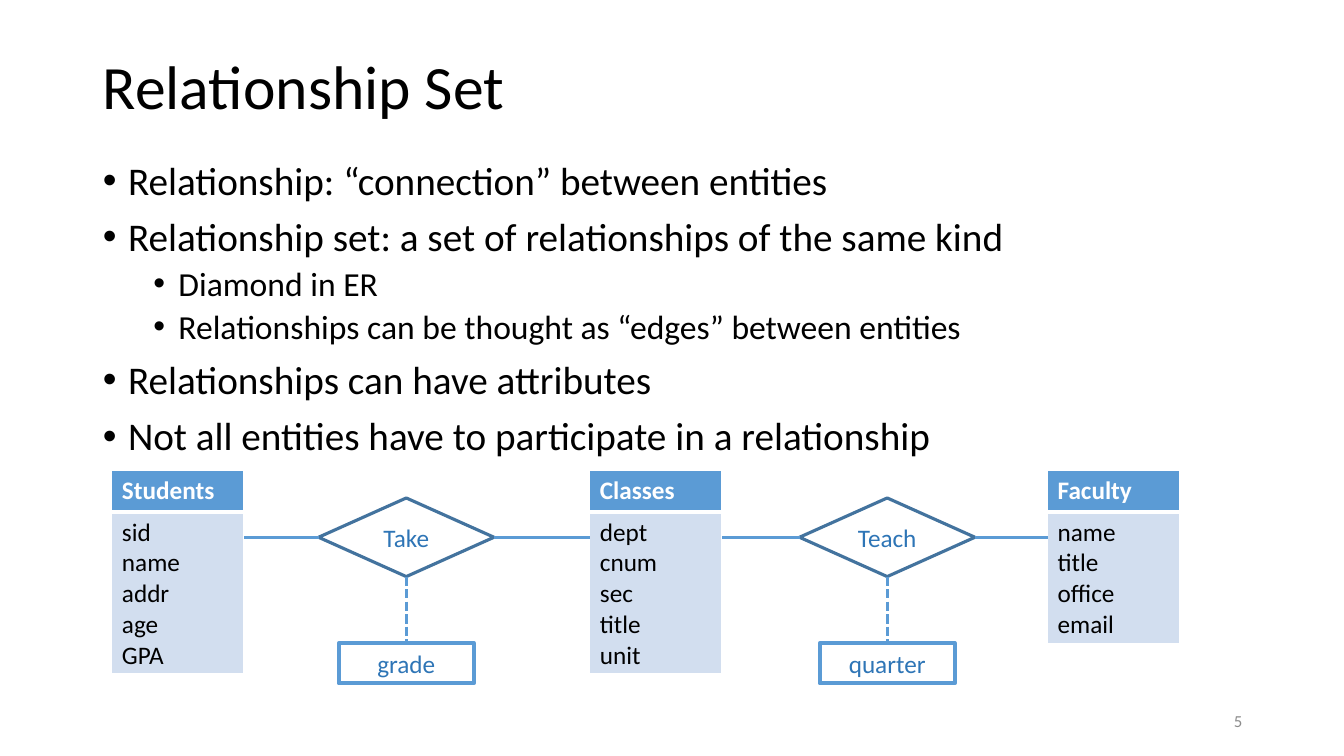
from dataclasses import dataclass

import pptx
import pptx.dml.color
import pptx.enum.dml
import pptx.enum.shapes
import pptx.enum.text
import pptx.oxml
import pptx.oxml.ns
import pptx.util

Inches = pptx.util.Inches
Pt = pptx.util.Pt
Align = pptx.enum.text.PP_ALIGN
Anchor = pptx.enum.text.MSO_ANCHOR
Shapes = pptx.enum.shapes.MSO_SHAPE

TITLE = "Relationship Set"
BULLETS = [
    (0, "Relationship: “connection” between entities"),
    (0, "Relationship set: a set of relationships of the same kind"),
    (1, "Diamond in ER"),
    (1, "Relationships can be thought as “edges” between entities"),
    (0, "Relationships can have attributes"),
    (0, "Not all entities have to participate in a relationship"),
]
# Entity name, left edge, attributes
ENTITIES = [
    ("Students", 1.11, ["sid", "name", "addr", "age", "GPA"]),
    ("Classes", 5.85, ["dept", "cnum", "sec", "title", "unit"]),
    ("Faculty", 10.39, ["name", "title", "office", "email"]),
]
# Relationship name, centre, attribute; each one joins two neighbouring entities
RELATIONSHIPS = [("Take", 4.03, "grade"), ("Teach", 8.8, "quarter")]
SLIDE_NUMBER = "5"


@dataclass(frozen=True)
class Theme:
    font: str = "Calibri"
    black: str = "000000"
    white: str = "FFFFFF"
    grey: str = "8C8C8C"
    blue: str = "5B9BD5"
    pale_blue: str = "D2DEEF"
    diamond_blue: str = "43739E"
    text_blue: str = "2E75B6"
    title_size: int = 44
    bullet_sizes: tuple = (28, 24)
    diagram_size: int = 18
    number_size: int = 12
    line_width: float = 2.25
    box_line_width: float = 2.75


THEME = Theme()
SLIDE_WIDTH, SLIDE_HEIGHT = 13.33, 7.5
MARGIN, CONTENT_WIDTH = 0.92, 11.5
ENTITY_TOP, ENTITY_WIDTH, HEADER_HEIGHT, LINE_HEIGHT = 4.67, 1.31, 0.41, 0.3
DIAMOND_WIDTH, DIAMOND_HEIGHT, AXIS = 1.74, 0.78, 5.33
BOX_WIDTH, BOX_HEIGHT, BOX_TOP = 1.34, 0.4, 6.38


def rgb(color):
    return pptx.dml.color.RGBColor.from_string(color)


def place(shape, left, top, width, height):
    shape.left, shape.top = Inches(left), Inches(top)
    shape.width, shape.height = Inches(width), Inches(height)


def write(frame, lines, size=THEME.diagram_size, color=THEME.black, bold=False,
          align=Align.LEFT, anchor=Anchor.TOP):
    """Fill a text frame with one paragraph per line and return the paragraphs."""
    frame.word_wrap = True
    frame.vertical_anchor = anchor
    paragraphs = []
    for index, line in enumerate(lines):
        paragraph = frame.add_paragraph() if index else frame.paragraphs[0]
        paragraph.alignment = align
        run = paragraph.add_run()
        run.text = line
        run.font.name, run.font.size, run.font.bold = THEME.font, Pt(size), bold
        run.font.color.rgb = rgb(color)
        paragraphs.append(paragraph)
    return paragraphs


def add_title(slide):
    title = slide.shapes.title
    place(title, MARGIN, 0.4, CONTENT_WIDTH, 0.97)
    title.text_frame.auto_size = pptx.enum.text.MSO_AUTO_SIZE.NONE
    paragraph = write(title.text_frame, [TITLE], size=THEME.title_size, anchor=Anchor.MIDDLE)[0]
    paragraph.line_spacing = 0.9


def add_bullets(slide):
    body = slide.placeholders[1]
    place(body, MARGIN, 1.55, CONTENT_WIDTH, 5.21)
    body.text_frame.auto_size = pptx.enum.text.MSO_AUTO_SIZE.NONE
    paragraphs = write(body.text_frame, [text for _, text in BULLETS])
    for paragraph, (level, _) in zip(paragraphs, BULLETS):
        paragraph.level = level
        paragraph.line_spacing = 0.9
        paragraph.space_before = Pt(5 if level else 10)
        paragraph.runs[0].font.size = Pt(THEME.bullet_sizes[level])
        properties = paragraph._p.get_or_add_pPr()
        properties.set("marL", str(Inches(0.25 + 0.5 * level)))
        properties.set("indent", str(Inches(-0.25)))
        for tag, name, value in (("a:buFont", "typeface", "Arial"), ("a:buChar", "char", "•")):
            bullet = pptx.oxml.parse_xml(f"<{tag} {pptx.oxml.ns.nsdecls('a')}/>")
            bullet.set(name, value)
            properties.append(bullet)


def set_borders(cell, **widths):
    """Draw white borders; widths in points are keyed by side: L, R, T, B."""
    properties = cell._tc.get_or_add_tcPr()
    for side, width in widths.items():
        properties.append(pptx.oxml.parse_xml(
            f'<a:ln{side} {pptx.oxml.ns.nsdecls("a")} w="{Pt(width)}"><a:solidFill>'
            f'<a:srgbClr val="{THEME.white}"/></a:solidFill></a:ln{side}>'))


def add_entity(slide, name, left, attributes):
    body_height = 0.1 + LINE_HEIGHT * len(attributes)
    table = slide.shapes.add_table(
        2, 1, Inches(left), Inches(ENTITY_TOP), Inches(ENTITY_WIDTH),
        Inches(HEADER_HEIGHT + body_height)).table
    table.rows[0].height, table.rows[1].height = Inches(HEADER_HEIGHT), Inches(body_height)
    header, body = table.cell(0, 0), table.cell(1, 0)
    set_borders(header, L=1, R=1, T=1, B=3)
    set_borders(body, L=1, R=1, T=3, B=1)
    for cell, fill in ((header, THEME.blue), (body, THEME.pale_blue)):
        cell.fill.solid()
        cell.fill.fore_color.rgb = rgb(fill)
    write(header.text_frame, [name], color=THEME.white, bold=True)
    write(body.text_frame, attributes)


def add_outline(slide, kind, text, center, top, width, height, color, line_width):
    shape = slide.shapes.add_shape(
        kind, Inches(center - width / 2), Inches(top), Inches(width), Inches(height))
    shape.shadow.inherit = False
    shape.fill.background()
    shape.line.color.rgb = rgb(color)
    shape.line.width = Pt(line_width)
    write(shape.text_frame, [text], color=THEME.text_blue, align=Align.CENTER,
          anchor=Anchor.MIDDLE)
    return shape


def add_link(slide, shape, site, end_x, end_y):
    """Draw a line from a connection site of a shape to a point."""
    link = slide.shapes.add_connector(
        pptx.enum.shapes.MSO_CONNECTOR.STRAIGHT, Inches(end_x), Inches(end_y),
        Inches(end_x), Inches(end_y))
    link.begin_connect(shape, site)
    link.line.color.rgb = rgb(THEME.blue)
    link.line.width = Pt(THEME.line_width)
    link._element.spPr.append(
        pptx.oxml.parse_xml(f"<a:effectLst {pptx.oxml.ns.nsdecls('a')}/>"))
    return link


def add_relationship(slide, name, center, attribute, left_entity, right_entity):
    diamond = add_outline(
        slide, Shapes.FLOWCHART_DECISION, name, center, AXIS - DIAMOND_HEIGHT / 2,
        DIAMOND_WIDTH, DIAMOND_HEIGHT, THEME.diamond_blue, THEME.line_width)
    box = add_outline(slide, Shapes.RECTANGLE, attribute, center, BOX_TOP, BOX_WIDTH,
                      BOX_HEIGHT, THEME.blue, THEME.box_line_width)
    add_link(slide, diamond, 1, left_entity[1] + ENTITY_WIDTH, AXIS)
    add_link(slide, diamond, 3, right_entity[1], AXIS)
    attribute_link = add_link(slide, diamond, 2, center, BOX_TOP)
    attribute_link.end_connect(box, 0)
    attribute_link.line.dash_style = pptx.enum.dml.MSO_LINE.SQUARE_DOT


def main():
    presentation = pptx.Presentation()
    presentation.slide_width = Inches(SLIDE_WIDTH)
    presentation.slide_height = Inches(SLIDE_HEIGHT)
    slide = presentation.slides.add_slide(presentation.slide_layouts[1])
    add_title(slide)
    add_bullets(slide)
    number = slide.shapes.add_textbox(Inches(9.42), Inches(6.95), Inches(3), Inches(0.4))
    write(number.text_frame, [SLIDE_NUMBER], size=THEME.number_size, color=THEME.grey,
          align=Align.RIGHT, anchor=Anchor.MIDDLE)
    for entity in ENTITIES:
        add_entity(slide, *entity)
    for relationship, left, right in zip(RELATIONSHIPS, ENTITIES, ENTITIES[1:]):
        add_relationship(slide, *relationship, left, right)
    presentation.save("out.pptx")


if __name__ == "__main__":
    main()
